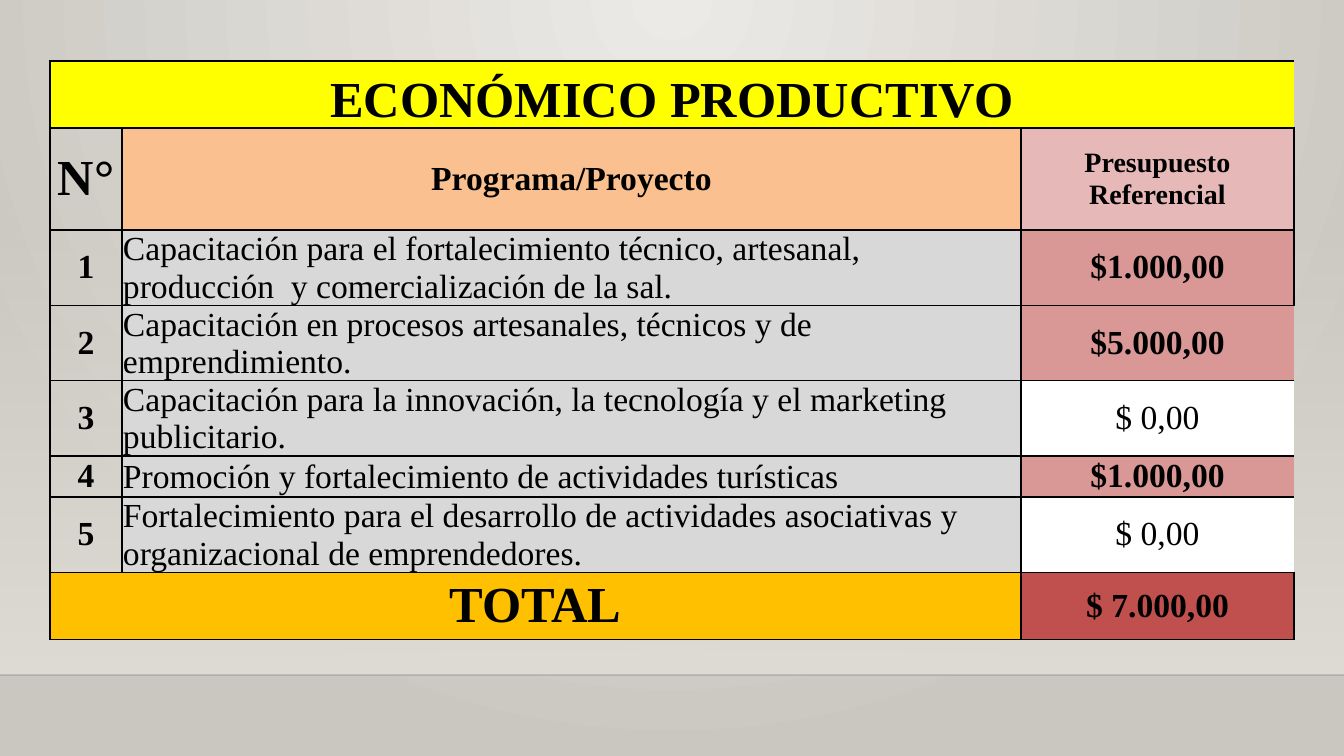
import dataclasses

import pptx
import pptx.dml.color
import pptx.enum.shapes
import pptx.enum.text
import pptx.oxml
import pptx.oxml.ns
import pptx.util

PX = 914400 / 100.8  # EMU per pixel
ANCHOR = pptx.enum.text.MSO_ANCHOR
ALIGN = pptx.enum.text.PP_ALIGN


@dataclasses.dataclass(frozen=True)
class Theme:
    font: str = "Times New Roman"
    ink: str = "000000"
    floor_line: str = "000001"
    glow: str = "ECEAE7"
    edge: str = "CAC7C1"
    wall: str = "DFDBD5"
    banner: str = "FFFF00"
    project_head: str = "FAC090"
    budget_head: str = "E6B9B8"
    project: str = "D8D8D8"
    funded: str = "D99795"
    unfunded: str = "FFFFFF"
    total: str = "FFC000"
    total_amount: str = "C0504D"
    large: int = 36
    body: int = 24
    small: int = 20
    line: int = 1


THEME = Theme()
COLUMNS = [72, 899, 273]
ROWS = [67, 102, 75, 75, 75, 41, 75, 67]
PROJECTS = [
    ("Capacitación para el fortalecimiento técnico, artesanal, "
     "producción  y comercialización de la sal.", "$1.000,00"),
    ("Capacitación en procesos artesanales, técnicos y de emprendimiento.", "$5.000,00"),
    ("Capacitación para la innovación, la tecnología y el marketing publicitario.", "$ 0,00"),
    ("Promoción y fortalecimiento de actividades turísticas", "$1.000,00"),
    ("Fortalecimiento para el desarrollo de actividades asociativas y "
     "organizacional de emprendedores.", "$ 0,00"),
]


def px(length):
    return pptx.util.Emu(round(length * PX))


def rgb(value):
    return pptx.dml.color.RGBColor.from_string(value)


def xml(tag, content="", attributes=""):
    return pptx.oxml.parse_xml(
        f'<a:{tag} {pptx.oxml.ns.nsdecls("a")} {attributes}>{content}</a:{tag}>')


def set_gradient(fill, owner, stops, direction):
    """Give a fill its (position, colour, opacity) stops, all in percent."""
    fill.gradient()
    gradient = next(owner.iter(pptx.oxml.ns.qn("a:gradFill")))
    marks = "".join(
        f'<a:gs pos="{position * 1000}"><a:srgbClr val="{colour}">'
        f'<a:alpha val="{opacity * 1000}"/></a:srgbClr></a:gs>'
        for position, colour, opacity in stops)
    gradient.getparent().replace(
        gradient, xml("gradFill", f"<a:gsLst>{marks}</a:gsLst>{direction}", 'rotWithShape="1"'))


def add_backdrop(page):
    # Light from the top centre
    set_gradient(page.background.fill, page.element,
                 [(0, THEME.glow, 100), (100, THEME.edge, 100)],
                 '<a:path path="circle"><a:fillToRect l="43000" t="0" r="43000" b="100000"/></a:path>')
    # Wall that fades in towards the floor
    wall = page.shapes.add_shape(pptx.enum.shapes.MSO_SHAPE.RECTANGLE,
                                 px(0), px(223), px(1344), px(452))
    wall.shadow.inherit = False
    wall.line.fill.background()
    set_gradient(wall.fill, wall.element, [(0, THEME.wall, 0), (100, THEME.wall, 100)],
                 '<a:lin ang="5400000" scaled="0"/>')
    # Faint floor line
    floor = page.shapes.add_connector(pptx.enum.shapes.MSO_CONNECTOR.STRAIGHT,
                                      px(0), px(675), px(1344), px(675))
    floor.line.width = pptx.util.Pt(THEME.line)
    floor.line.color.rgb = rgb(THEME.floor_line)
    colour = next(floor.element.iter(pptx.oxml.ns.qn("a:srgbClr")))
    colour.append(xml("alpha", attributes='val="20000"'))
    floor.element.spPr.append(xml("effectLst"))


def set_borders(cell, open_right):
    properties = cell._tc.get_or_add_tcPr()
    solid = f'<a:solidFill><a:srgbClr val="{THEME.ink}"/></a:solidFill>'
    for index, side in enumerate("LRTB"):
        paint = "<a:noFill/>" if side == "R" and open_right else solid
        properties.insert(index, xml(f"ln{side}", paint, f'w="{pptx.util.Pt(THEME.line)}"'))


def write_cell(cell, text, size=THEME.body, fill=None, bold=True,
               align=ALIGN.CENTER, anchor=ANCHOR.MIDDLE, inset=0):
    cell.margin_left = cell.margin_right = cell.margin_top = px(inset)
    cell.margin_bottom = 0
    cell.vertical_anchor = anchor
    if fill:
        cell.fill.solid()
        cell.fill.fore_color.rgb = rgb(fill)
    else:
        cell.fill.background()
    para = cell.text_frame.paragraphs[0]
    para.alignment = align
    span = para.add_run()
    span.text = text
    span.font.name = THEME.font
    span.font.size = pptx.util.Pt(size)
    span.font.bold = bold
    span.font.color.rgb = rgb(THEME.ink)


def add_budget_table(page):
    table = page.shapes.add_table(len(ROWS), len(COLUMNS), px(50), px(61),
                                  px(sum(COLUMNS)), px(sum(ROWS))).table
    table.first_row = table.horz_banding = False
    for column, width in zip(table.columns, COLUMNS):
        column.width = px(width)
    for row, height in zip(table.rows, ROWS):
        row.height = px(height)
    last = len(ROWS) - 1

    # Banner and column heads
    table.cell(0, 0).merge(table.cell(0, 2))
    write_cell(table.cell(0, 0), "ECONÓMICO PRODUCTIVO", THEME.large, THEME.banner,
               anchor=ANCHOR.BOTTOM)
    write_cell(table.cell(1, 0), "N°", THEME.large)
    write_cell(table.cell(1, 1), "Programa/Proyecto", fill=THEME.project_head)
    write_cell(table.cell(1, 2), "Presupuesto Referencial", THEME.small, THEME.budget_head)

    # Projects
    for number, (project, amount) in enumerate(PROJECTS, 1):
        row = number + 1
        funded = amount != "$ 0,00"
        write_cell(table.cell(row, 0), str(number))
        write_cell(table.cell(row, 1), project, fill=THEME.project, bold=False,
                   align=ALIGN.LEFT, inset=1)
        write_cell(table.cell(row, 2), amount, bold=funded,
                   fill=THEME.funded if funded else THEME.unfunded)

    # Total
    table.cell(last, 0).merge(table.cell(last, 1))
    write_cell(table.cell(last, 0), "TOTAL", THEME.large, THEME.total)
    write_cell(table.cell(last, 2), "$ 7.000,00", fill=THEME.total_amount)

    # Borders: the banner and the later amounts are open on the right
    for row in range(len(ROWS)):
        for column in range(len(COLUMNS)):
            open_right = row == 0 or (column == 2 and 3 <= row < last)
            set_borders(table.cell(row, column), open_right)


def main():
    deck = pptx.Presentation()
    deck.slide_width, deck.slide_height = px(1344), px(756)
    page = deck.slides.add_slide(deck.slide_layouts[6])
    add_backdrop(page)
    add_budget_table(page)
    deck.save("out.pptx")


if __name__ == "__main__":
    main()
